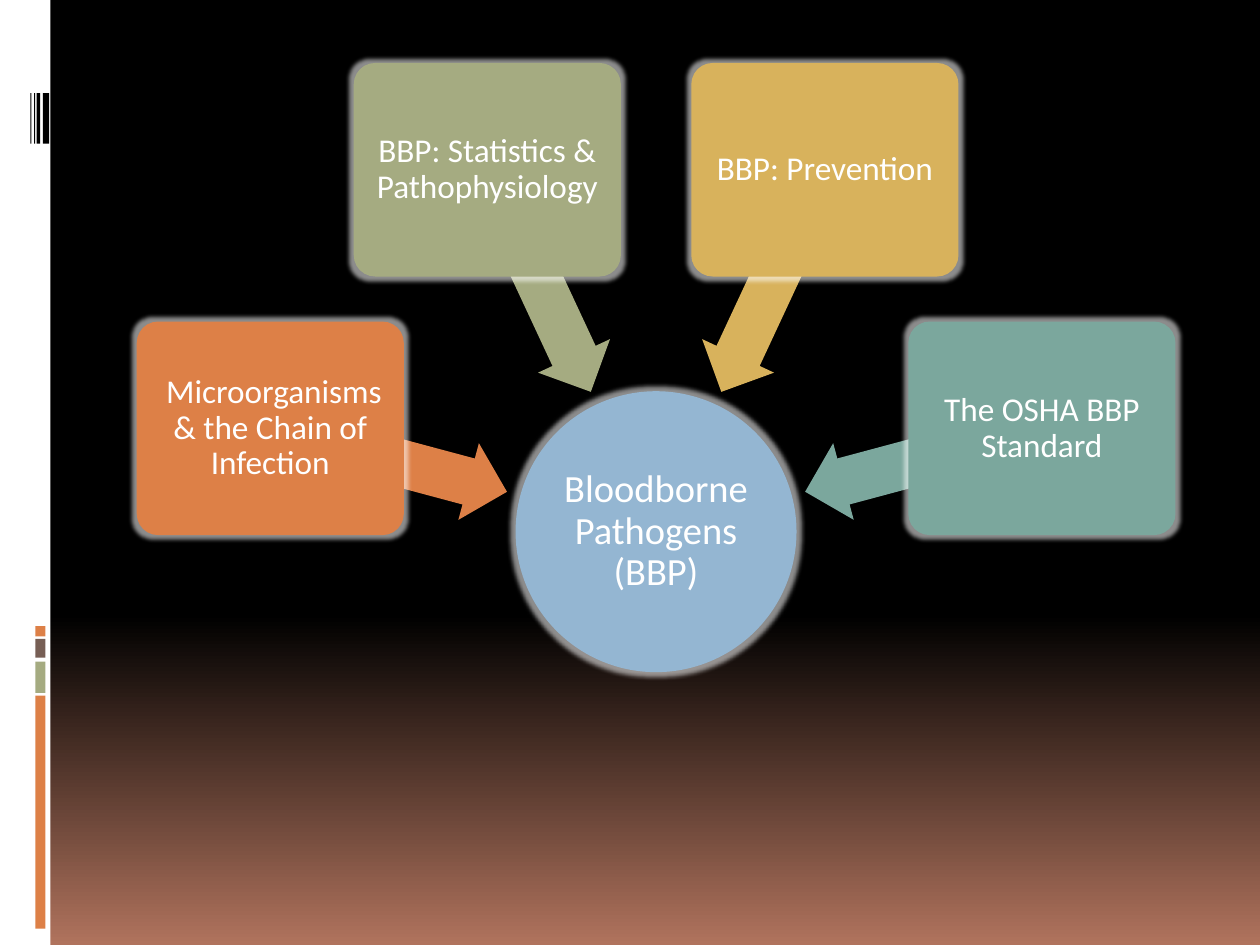
from math import cos, radians, sin

from lxml.etree import SubElement
from pptx import Presentation
from pptx.dml.color import RGBColor
from pptx.enum.shapes import MSO_SHAPE as Shape
from pptx.enum.text import MSO_ANCHOR as Anchor, PP_ALIGN as Align
from pptx.oxml.ns import qn
from pptx.util import Inches, Pt

COLORS = {
    "white": "FFFFFF", "black": "000000", "clay": "B0735D",
    "orange": "DD8047", "sage": "A5AB81", "brown": "775F55",
    "gold": "D8B25C", "teal": "7BA79D", "blue": "94B6D2",
}
COLUMNS, ROWS = 100, 75


class SlideBuilder:
    """Draws on one slide; lengths are columns and rows of a 100 x 75 grid."""

    font = "Calibri"

    def __init__(self, deck):
        self.slide = deck.slides.add_slide(deck.slide_layouts[6])
        self.column = deck.slide_width / COLUMNS
        self.row = deck.slide_height / ROWS

    def color(self, name):
        return RGBColor.from_string(COLORS[name])

    def background(self, top, bottom, start):
        fill = self.slide.background.fill
        fill.gradient()
        fill.gradient_angle = 270
        for stop, name, position in zip(fill.gradient_stops, (top, bottom), (start, 1)):
            stop.color.rgb = self.color(name)
            stop.position = position

    def shape(self, kind, left, top, width, height, color):
        shape = self.slide.shapes.add_shape(
            kind, round(left * self.column), round(top * self.row),
            round(width * self.column), round(height * self.row))
        shape.shadow.inherit = False
        shape.fill.solid()
        shape.fill.fore_color.rgb = self.color(color)
        shape.line.fill.background()
        return shape

    def centered(self, kind, center, size, color):
        (x, y), (width, height) = center, size
        return self.shape(kind, x - width / 2, y - height / 2, width, height, color)

    def arrow(self, center, size, rotation, color):
        arrow = self.centered(Shape.LEFT_ARROW, center, size, color)
        arrow.rotation = rotation
        arrow.adjustments[0], arrow.adjustments[1] = 0.6, 0.5

    def label(self, shape, text, size, inset):
        frame = shape.text_frame
        frame.word_wrap = True
        frame.vertical_anchor = Anchor.MIDDLE
        frame.margin_left = frame.margin_right = Inches(inset)
        frame.margin_top = frame.margin_bottom = Inches(inset)
        para = frame.paragraphs[0]
        para.alignment = Align.CENTER
        para.line_spacing = 0.9
        span = para.add_run()
        span.text = text
        span.font.name = self.font
        span.font.size = Pt(size)
        span.font.color.rgb = self.color("white")

    def glow(self, shape, radius=5, opacity=55):
        effects = shape._element.spPr.find(qn("a:effectLst"))
        glow = SubElement(effects, qn("a:glow"), rad=str(Pt(radius)))
        tint = SubElement(glow, qn("a:srgbClr"), val=COLORS["white"])
        SubElement(tint, qn("a:alpha"), val=str(opacity * 1000))

    def node(self, kind, center, size, color, text, points, inset):
        node = self.centered(kind, center, size, color)
        self.glow(node)
        self.label(node, text, points, inset)
        return node


def main():
    deck = Presentation()
    deck.slide_width, deck.slide_height = Inches(10), Inches(7.5)
    page = SlideBuilder(deck)
    page.background("black", "clay", 0.65)

    # Side strip with its colour blocks and bars
    page.shape(Shape.RECTANGLE, 0, 0, 4, ROWS, "white")
    for top, height, color in ((55.2, 18.5, "orange"), (52.5, 2.5, "sage"),
                               (50.7, 1.5, "brown"), (49.7, 0.8, "orange")):
        page.shape(Shape.RECTANGLE, 2.8, top, 0.8, height, color)
    for left, width in ((3.4, 0.5), (2.9, 0.3), (2.7, 0.1), (2.4, 0.1)):
        page.shape(Shape.RECTANGLE, left, 7.4, width, 4, "black")

    # Hub
    hub_x, hub_y = hub = (52.07, 42.2)
    page.node(Shape.OVAL, hub, (22.3, 22.3), "blue", "Bloodborne Pathogens (BBP)", 22, 0.01)

    # Topics on an arc around the hub, each with an arrow pointing inwards
    topics = (
        (" Microorganisms & the Chain of Infection", "orange"),
        ("BBP: Statistics & Pathophysiology", "sage"),
        ("BBP: Prevention", "gold"),
        ("The OSHA BBP Standard", "teal"),
    )
    for index, (text, color) in enumerate(topics):
        angle = 15 + 50 * index
        across, up = cos(radians(angle)), sin(radians(angle))
        arrow_center, box_center = (
            (hub_x - reach * across, hub_y - reach * up) for reach in (22, 31.7))
        page.arrow(arrow_center, (19.5, 6.3), 180 + angle, color)
        box = page.node(Shape.ROUNDED_RECTANGLE, box_center, (21.2, 16.95),
                        color, text, 19, 0.04)
        box.adjustments[0] = 0.1

    deck.save("out.pptx")


if __name__ == "__main__":
    main()
